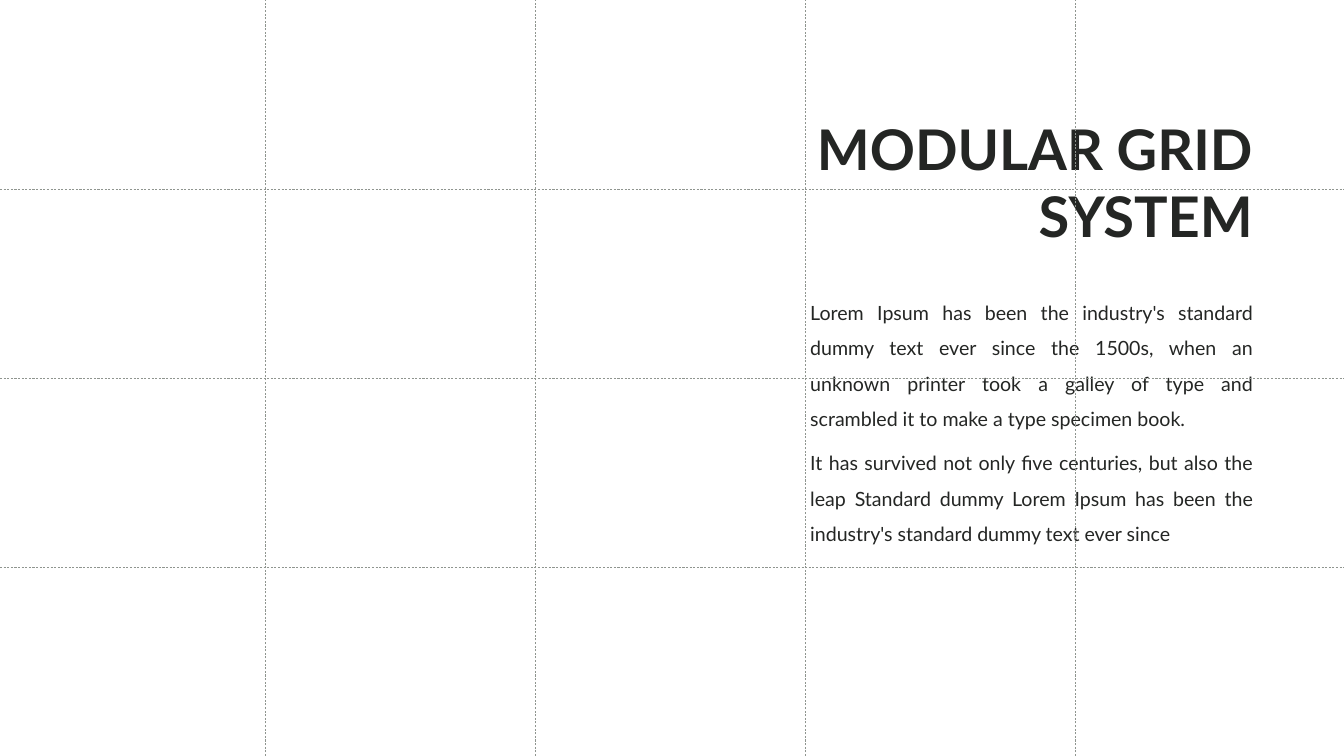
from lxml import etree
from pptx import Presentation
from pptx.dml.color import RGBColor
from pptx.enum.dml import MSO_LINE
from pptx.enum.shapes import MSO_CONNECTOR
from pptx.enum.text import MSO_ANCHOR, PP_ALIGN
from pptx.oxml.ns import qn
from pptx.util import Inches, Pt

TITLE = ["MODULAR GRID SYSTEM"]
BODY = [
    "Lorem Ipsum has been the industry's standard dummy text ever since the 1500s, "
    "when an unknown printer took a galley of type and scrambled it to make a type "
    "specimen book.",
    "It has survived not only five centuries, but also the leap Standard dummy Lorem "
    "Ipsum has been the industry's standard dummy text ever since",
]

INK = RGBColor(0x24, 0x26, 0x24)
GRID = RGBColor(0x8F, 0x95, 0x8F)
WHITE = RGBColor(0xFF, 0xFF, 0xFF)
FONT = "Lato"

WIDTH, HEIGHT = 26.67, 15
ROWS = 4
FIRST_COLUMN, COLUMN_STEP, COLUMN_LINES = 5.26, 5.36, 4
TEXT_LEFT, TEXT_WIDTH = 15.98, 8.98


def add_text(slide, paragraphs, top, height, *, size, align, bold=False,
             line_spacing=1.0, space_before=0):
    box = slide.shapes.add_textbox(Inches(TEXT_LEFT), Inches(top),
                                   Inches(TEXT_WIDTH), Inches(height))
    frame = box.text_frame
    frame.word_wrap = True
    frame.vertical_anchor = MSO_ANCHOR.TOP
    for index, text in enumerate(paragraphs):
        paragraph = frame.paragraphs[0] if index == 0 else frame.add_paragraph()
        paragraph.alignment = align
        paragraph.line_spacing = line_spacing
        paragraph.space_before = Pt(space_before if index else 0)
        run = paragraph.add_run()
        run.text = text
        run.font.name = FONT
        run.font.size = Pt(size)
        run.font.bold = bold
        run.font.color.rgb = INK


def add_grid_line(slide, x1, y1, x2, y2):
    connector = slide.shapes.add_connector(
        MSO_CONNECTOR.STRAIGHT, Inches(x1), Inches(y1), Inches(x2), Inches(y2))
    connector.line.color.rgb = GRID
    connector.line.width = Pt(0.75)
    connector.line.dash_style = MSO_LINE.DASH
    etree.SubElement(connector._element.spPr, qn("a:effectLst"))


def main():
    deck = Presentation()
    deck.slide_width, deck.slide_height = Inches(WIDTH), Inches(HEIGHT)
    slide = deck.slides.add_slide(deck.slide_layouts[6])
    slide.background.fill.solid()
    slide.background.fill.fore_color.rgb = WHITE

    add_text(slide, TITLE, 2.22, 2.91, size=80, align=PP_ALIGN.RIGHT, bold=True)
    add_text(slide, BODY, 5.69, 5.56, size=28, align=PP_ALIGN.JUSTIFY,
             line_spacing=1.5, space_before=12.7)

    for row in range(1, ROWS):
        y = HEIGHT * row / ROWS
        add_grid_line(slide, 0, y, WIDTH, y)
    for column in range(COLUMN_LINES):
        x = FIRST_COLUMN + COLUMN_STEP * column
        add_grid_line(slide, x, HEIGHT, x, 0)

    deck.save("out.pptx")


if __name__ == "__main__":
    main()
